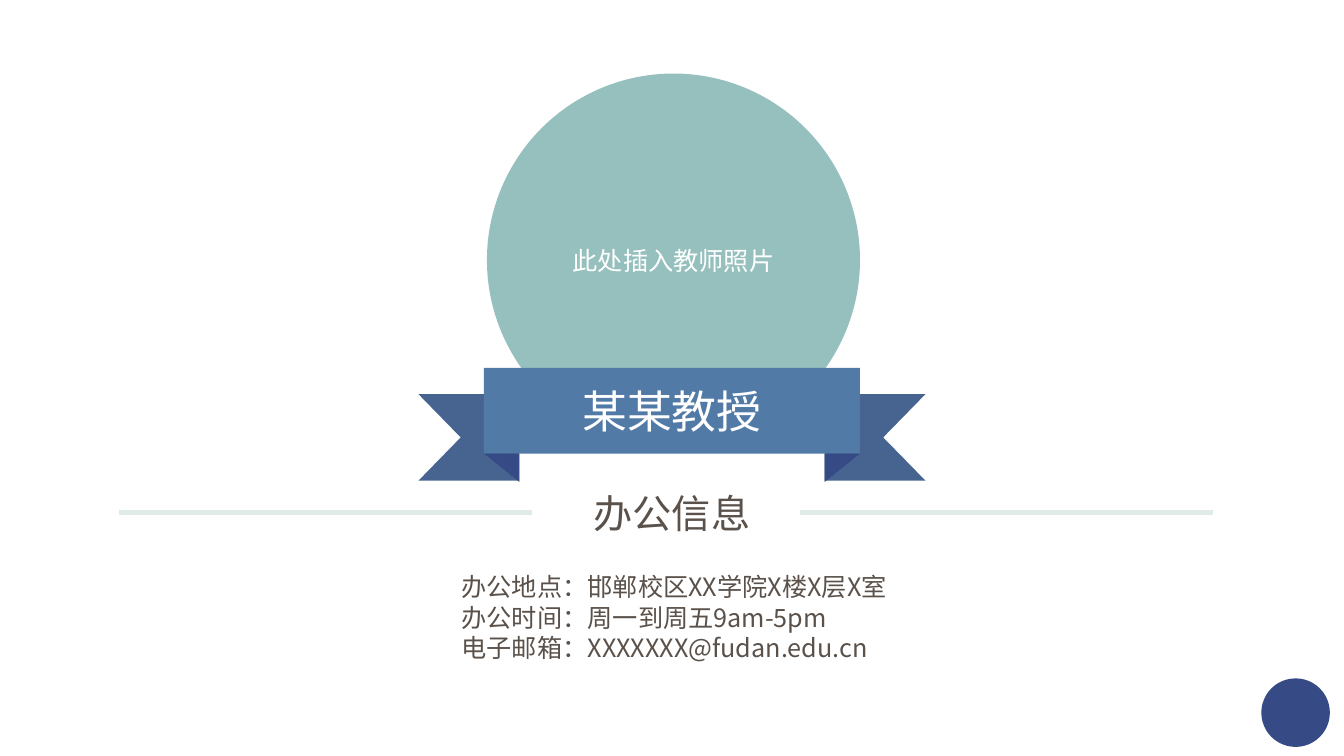
from dataclasses import dataclass

from lxml import etree
from pptx import Presentation
from pptx.dml.color import RGBColor
from pptx.enum.shapes import MSO_CONNECTOR, MSO_SHAPE
from pptx.enum.text import MSO_ANCHOR, PP_ALIGN
from pptx.oxml.ns import qn
from pptx.util import Inches, Pt

OVAL, RECTANGLE = MSO_SHAPE.OVAL, MSO_SHAPE.RECTANGLE
RIGHT_TRIANGLE = MSO_SHAPE.RIGHT_TRIANGLE
STRAIGHT = MSO_CONNECTOR.STRAIGHT
LEFT, CENTER = PP_ALIGN.LEFT, PP_ALIGN.CENTER
TOP, MIDDLE = MSO_ANCHOR.TOP, MSO_ANCHOR.MIDDLE


@dataclass(frozen=True)
class Theme:
    portrait: str = "96C0BE"
    ribbon: str = "517AA6"
    tail: str = "476490"
    navy: str = "364A85"
    rule: str = "E0EAE8"
    ink: str = "5A514A"
    white: str = "FFFFFF"
    font: str = "Noto Sans CJK SC"
    latin: str = "Calibri"
    name_size: int = 32
    heading_size: int = 28
    body_size: int = 18
    rule_width: int = 3


THEME = Theme()


def paint(shape, color):
    shape.shadow.inherit = False
    shape.fill.solid()
    shape.fill.fore_color.rgb = RGBColor.from_string(color)
    shape.line.fill.background()
    return shape


def add_block(slide, kind, box, color):
    return paint(slide.shapes.add_shape(kind, *map(Inches, box)), color)


def write(shape, lines, *, size, color, font=THEME.font, align=CENTER,
          anchor=MIDDLE, wrap=True, pitch=None):
    frame = shape.text_frame
    frame.word_wrap = wrap
    frame.vertical_anchor = anchor
    for index, line in enumerate(lines):
        paragraph = frame.add_paragraph() if index else frame.paragraphs[0]
        paragraph.alignment = align
        if pitch:
            paragraph.line_spacing = Pt(pitch)
        run = paragraph.add_run()
        run.text = line
        run.font.size = Pt(size)
        run.font.name = font
        run.font.color.rgb = RGBColor.from_string(color)
        east_asian = etree.SubElement(run.font._element, qn("a:ea"))
        east_asian.set("typeface", THEME.font)


def add_portrait(slide, box):
    portrait = add_block(slide, OVAL, box, THEME.portrait)
    write(portrait, ["此处插入教师照片"], size=THEME.body_size,
          color=THEME.white, font=THEME.latin)


def add_tail(slide, outer, top, direction):
    width, height, notch = 1, 0.86, 0.42
    inner = outer + direction * width
    points = [(outer, top), (inner, top), (inner, top + height),
              (outer, top + height),
              (outer + direction * notch, top + height / 2)]
    corners = [(Inches(x), Inches(y)) for x, y in points]
    builder = slide.shapes.build_freeform(*corners[0], scale=1.0)
    builder.add_line_segments(corners[1:], close=True)
    paint(builder.convert_to_shape(), THEME.tail)


def add_ribbon(slide, box):
    left, top, width, height = box
    right, bottom = left + width, top + height
    overhang, drop = 0.65, 0.26
    fold_width, fold_height = 0.35, 0.28
    add_tail(slide, left - overhang, top + drop, 1)
    add_tail(slide, right + overhang, top + drop, -1)
    band = add_block(slide, RECTANGLE, box, THEME.ribbon)
    write(band, ["某某教授"], size=THEME.name_size, color=THEME.white)

    left_fold = add_block(slide, RIGHT_TRIANGLE,
                          (left, bottom, fold_width, fold_height), THEME.navy)
    left_fold.rotation = 180
    inset = (fold_width - fold_height) / 2
    right_fold = add_block(slide, RIGHT_TRIANGLE,
                           (right - fold_width + inset, bottom - inset,
                            fold_height, fold_width), THEME.navy)
    right_fold.rotation = 90


def add_heading(slide, box):
    left, top, width, height = box
    rule_length, title_width = 4.1, 1.76
    middle = top + height / 2
    for start in (left, left + width - rule_length):
        rule = slide.shapes.add_connector(
            STRAIGHT, Inches(start), Inches(middle),
            Inches(start + rule_length), Inches(middle))
        rule.line.color.rgb = RGBColor.from_string(THEME.rule)
        rule.line.width = Pt(THEME.rule_width)
        etree.SubElement(rule._element.spPr, qn("a:effectLst"))
    title_left = left + (width - title_width) / 2 + 0.06
    title = slide.shapes.add_textbox(
        *map(Inches, (title_left, top, title_width, height)))
    write(title, ["办公信息"], size=THEME.heading_size, color=THEME.ink,
          anchor=TOP, wrap=False, pitch=34)


def add_office_details(slide, box):
    details = slide.shapes.add_textbox(*map(Inches, box))
    write(details, ["办公地点：邯郸校区XX学院X楼X层X室",
                    "办公时间：周一到周五9am-5pm",
                    "电子邮箱：XXXXXXX@fudan.edu.cn"],
          size=THEME.body_size, color=THEME.ink, align=LEFT, anchor=TOP,
          pitch=21.7)


def main():
    deck = Presentation()
    deck.slide_width, deck.slide_height = Inches(13.33), Inches(7.5)
    slide = deck.slides.add_slide(deck.slide_layouts[6])
    add_block(slide, OVAL, (12.51, 6.73, 0.68, 0.68), THEME.navy)
    add_portrait(slide, (4.83, 0.73, 3.7, 3.7))
    add_ribbon(slide, (4.8, 3.65, 3.73, 0.85))
    add_heading(slide, (1.18, 4.8, 10.85, 0.57))
    add_office_details(slide, (4.48, 5.62, 4.7, 1.01))
    deck.save("out.pptx")


if __name__ == "__main__":
    main()
